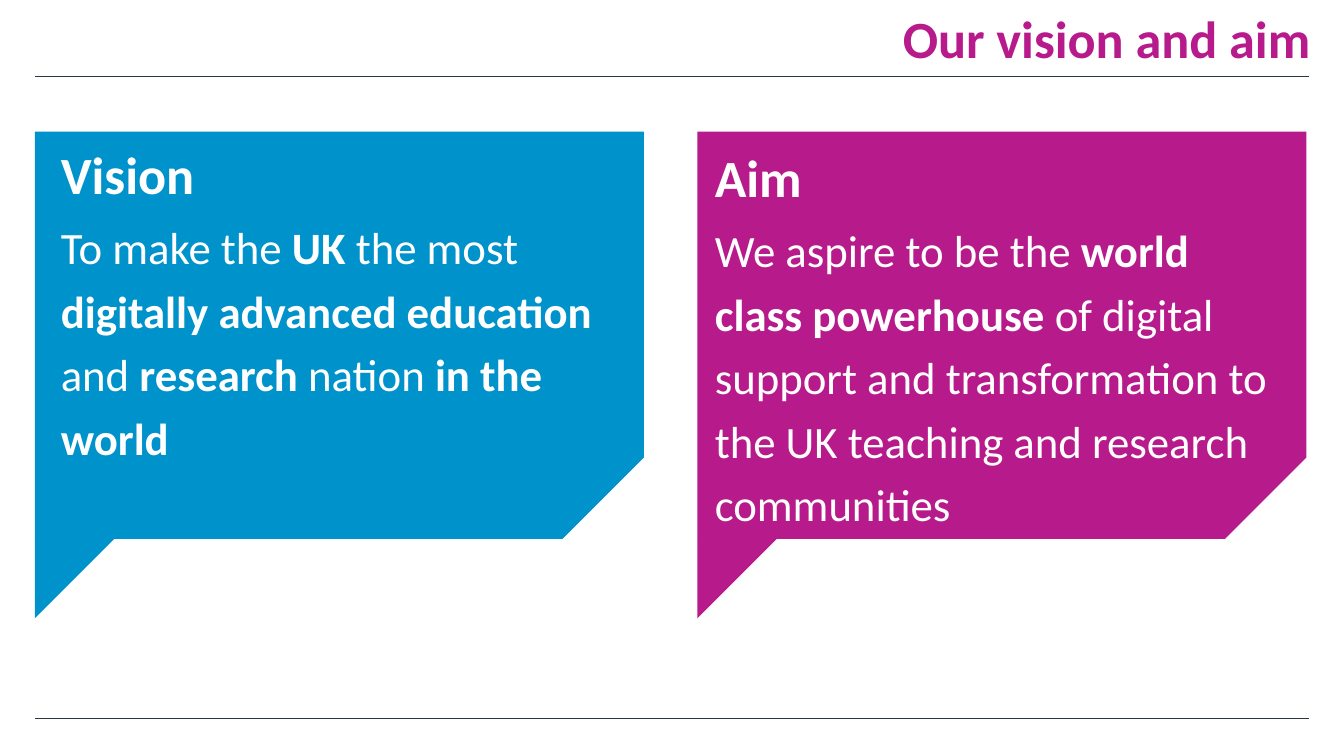
from dataclasses import dataclass

from lxml import etree
from pptx import Presentation
from pptx.dml.color import RGBColor
from pptx.enum.shapes import MSO_CONNECTOR, MSO_SHAPE
from pptx.enum.text import MSO_ANCHOR, PP_ALIGN
from pptx.oxml.ns import qn
from pptx.slide import Slide
from pptx.util import Cm, Pt

SNIPPED = MSO_SHAPE.SNIP_1_RECTANGLE
TRIANGLE = MSO_SHAPE.RIGHT_TRIANGLE
STRAIGHT = MSO_CONNECTOR.STRAIGHT
TOP, BOTTOM = MSO_ANCHOR.TOP, MSO_ANCHOR.BOTTOM
LEFT, RIGHT = PP_ALIGN.LEFT, PP_ALIGN.RIGHT

FONT = "Calibri"
MAGENTA, BLUE, WHITE, SLATE = "B71A8B", "0092CB", "FFFFFF", "2C3841"
MARGIN, RULE_END = 0.66, 24.74
BUBBLE_TOP, BUBBLE_WIDTH, BUBBLE_HEIGHT, TAIL = 2.49, 11.51, 7.7, 1.5
SNIP = 0.2

Run = tuple[str, bool]


@dataclass
class Bubble:
    left: float
    color: str
    heading: str
    heading_spacing: float | None
    statement: list[Run]
    text_left: float
    text_width: float
    text_height: float


@dataclass
class Line:
    runs: list[Run]
    size: float
    spacing: float | None = None
    before: float = 0


BUBBLES = [
    Bubble(13.18, MAGENTA, "Aim", None, [
        ("We aspire to be the ", False),
        ("world class powerhouse", True),
        (" of digital support and transformation to the UK teaching "
         "and research communities", False),
    ], 13.51, 10.77, 7.49),
    Bubble(MARGIN, BLUE, "Vision", 32, [
        ("To make the ", False),
        ("UK", True),
        (" the most ", False),
        ("digitally advanced education", True),
        (" and ", False),
        ("research", True),
        (" nation ", False),
        ("in the world", True),
    ], 1.15, 10.49, 6.22),
]


def rgb(value: str) -> RGBColor:
    return RGBColor.from_string(value)


def add_text(slide: Slide, lines: list[Line], *, left: float, top: float,
             width: float, height: float, color: str,
             align=LEFT, anchor=TOP) -> None:
    frame = slide.shapes.add_textbox(
        Cm(left), Cm(top), Cm(width), Cm(height)).text_frame
    frame.word_wrap = True
    frame.vertical_anchor = anchor
    frame.margin_left = frame.margin_right = 0
    frame.margin_top = frame.margin_bottom = 0
    for index, line in enumerate(lines):
        paragraph = frame.add_paragraph() if index else frame.paragraphs[0]
        paragraph.alignment = align
        paragraph.space_before = Pt(line.before)
        if line.spacing:
            paragraph.line_spacing = Pt(line.spacing)
        for words, bold in line.runs:
            run = paragraph.add_run()
            run.text = words
            run.font.name = FONT
            run.font.size = Pt(line.size)
            run.font.bold = bold
            run.font.color.rgb = rgb(color)


def add_rule(slide: Slide, height: float) -> None:
    rule = slide.shapes.add_connector(
        STRAIGHT, Cm(MARGIN), Cm(height), Cm(RULE_END), Cm(height))
    rule.line.color.rgb = rgb(SLATE)
    rule.line.width = Pt(0.5)
    etree.SubElement(rule._element.spPr, qn("a:effectLst"))


def add_flipped(slide: Slide, preset, left: float, top: float,
                width: float, height: float, color: str):
    shape = slide.shapes.add_shape(
        preset, Cm(left), Cm(top), Cm(width), Cm(height))
    shape.shadow.inherit = False
    shape.fill.solid()
    shape.fill.fore_color.rgb = rgb(color)
    shape.line.fill.background()
    shape._element.spPr.find(qn("a:xfrm")).set("flipV", "1")
    return shape


def add_bubble(slide: Slide, bubble: Bubble) -> None:
    body = add_flipped(slide, SNIPPED, bubble.left, BUBBLE_TOP,
                       BUBBLE_WIDTH, BUBBLE_HEIGHT, bubble.color)
    body.adjustments[0] = SNIP
    add_flipped(slide, TRIANGLE, bubble.left, BUBBLE_TOP + BUBBLE_HEIGHT,
                TAIL, TAIL, bubble.color)
    add_text(slide, [
        Line([(bubble.heading, True)], 28, bubble.heading_spacing),
        Line(bubble.statement, 24, 34, before=3),
    ], left=bubble.text_left, top=2.74, width=bubble.text_width,
        height=bubble.text_height, color=WHITE)


def main() -> None:
    deck = Presentation()
    deck.slide_width, deck.slide_height = Cm(25.4), Cm(14.29)
    slide = deck.slides.add_slide(deck.slide_layouts[6])
    for height in (13.59, 1.45):
        add_rule(slide, height)
    add_text(slide, [Line([("Our vision and aim", True)], 28)],
             left=3.91, top=0, width=20.85, height=1.3,
             color=MAGENTA, align=RIGHT, anchor=BOTTOM)
    for bubble in BUBBLES:
        add_bubble(slide, bubble)
    deck.save("out.pptx")


if __name__ == "__main__":
    main()
